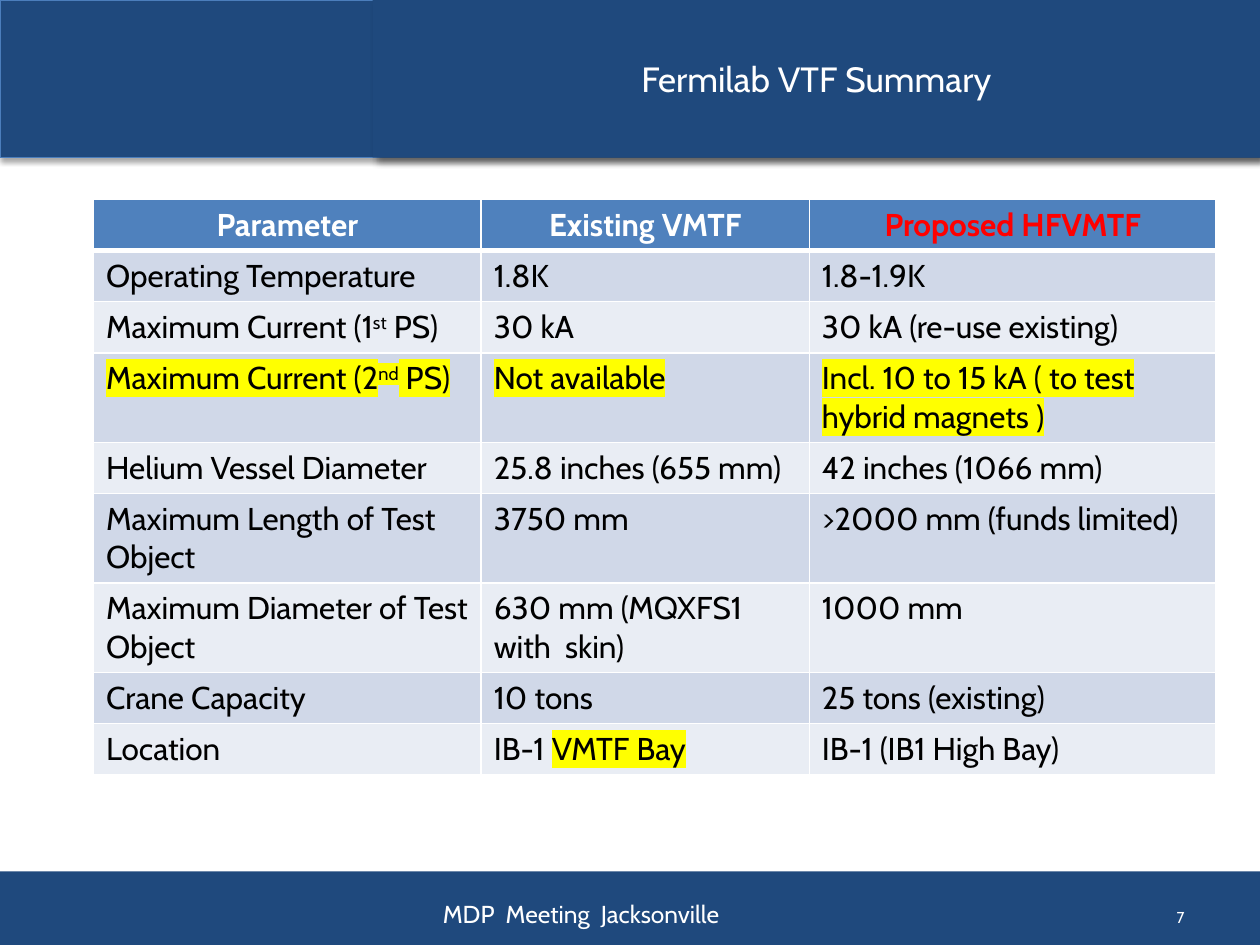
from collections import namedtuple
from dataclasses import dataclass

from lxml import etree
from pptx import Presentation
from pptx.dml.color import RGBColor
from pptx.enum.shapes import MSO_SHAPE
from pptx.enum.text import MSO_ANCHOR, MSO_AUTO_SIZE, PP_ALIGN
from pptx.oxml import parse_xml
from pptx.oxml.ns import nsdecls, qn
from pptx.util import Pt

RECTANGLE = MSO_SHAPE.RECTANGLE
TOP, MIDDLE = MSO_ANCHOR.TOP, MSO_ANCHOR.MIDDLE
LEFT, CENTER, RIGHT = PP_ALIGN.LEFT, PP_ALIGN.CENTER, PP_ALIGN.RIGHT
NO_FIT = MSO_AUTO_SIZE.NONE
TITLE_ONLY = 5

Shadow = namedtuple("Shadow", "opacity blur distance angle")
Piece = namedtuple("Piece", "text marked raised", defaults=(False, False))


@dataclass(frozen=True)
class Theme:
    font: str = "Cabin"
    navy: str = "1F497D"
    outline: str = "4B7EBC"
    header: str = "4F81BD"
    bands: tuple = ("D0D8E8", "E9EDF4")
    white: str = "FFFFFF"
    black: str = "000000"
    red: str = "FF0000"
    marker: str = "FFFF00"
    title_size: int = 20
    table_size: int = 18
    footer_size: int = 14
    number_size: int = 9


# Table content: a cell is plain text or a list of pieces
HEADINGS = ["Parameter", "Existing VMTF", "Proposed HFVMTF"]
ROWS = [
    ["Operating Temperature", "1.8K", "1.8-1.9K"],
    [[Piece("Maximum Current (1"), Piece("st", raised=True), Piece(" PS)")],
     "30 kA", "30 kA (re-use existing)"],
    [[Piece("Maximum Current (2", True), Piece("nd", True, True), Piece(" PS)", True)],
     [Piece("Not available", True)],
     [Piece("Incl. 10 to 15 kA ( to test hybrid magnets )", True)]],
    ["Helium Vessel Diameter", "25.8 inches (655 mm)", "42 inches (1066 mm)"],
    ["Maximum Length of Test Object", "3750 mm", ">2000 mm (funds limited)"],
    ["Maximum Diameter of Test Object", "630 mm (MQXFS1 with  skin)", "1000 mm"],
    ["Crane Capacity", "10 tons", "25 tons (existing)"],
    ["Location", [Piece("IB-1 "), Piece("VMTF Bay", True)], "IB-1 (IB1 High Bay)"],
]


class PageBuilder:
    def __init__(self, page, theme):
        self.page = page
        self.theme = theme

    def style_span(self, span, size, color, bold=False):
        span.font.name = self.theme.font
        span.font.size = Pt(size)
        span.font.bold = bold
        span.font.color.rgb = RGBColor.from_string(color)

    def set_text(self, frame, text, size, align, anchor):
        frame.text = text
        frame.word_wrap = True
        frame.auto_size = NO_FIT
        frame.vertical_anchor = anchor
        para = frame.paragraphs[0]
        para.alignment = align
        self.style_span(para.runs[0], size, self.theme.white)

    def paint(self, shape, shadow=None, outline=None):
        shape.fill.solid()
        shape.fill.fore_color.rgb = RGBColor.from_string(self.theme.navy)
        if outline:
            shape.line.color.rgb = RGBColor.from_string(outline)
            shape.line.width = Pt(0.75)
        else:
            shape.line.fill.background()
        shape.shadow.inherit = False
        if shadow:
            effects = shape._element.spPr.find(qn("a:effectLst"))
            effects.append(parse_xml(
                f'<a:outerShdw {nsdecls("a")} blurRad="{Pt(shadow.blur)}" '
                f'dist="{Pt(shadow.distance)}" dir="{shadow.angle * 60000}" '
                f'algn="tl" rotWithShape="0"><a:srgbClr val="{self.theme.black}">'
                f'<a:alpha val="{shadow.opacity * 1000}"/></a:srgbClr></a:outerShdw>'))

    def band(self, left, top, width, height, shadow=None, outline=None):
        shape = self.page.shapes.add_shape(
            RECTANGLE, Pt(left), Pt(top), Pt(width), Pt(height))
        self.paint(shape, shadow, outline)

    def title(self, text, left, top, width, height, shadow):
        title = self.page.shapes.title
        title.left, title.top = Pt(left), Pt(top)
        title.width, title.height = Pt(width), Pt(height)
        self.paint(title, shadow)
        self.set_text(title.text_frame, text, self.theme.title_size, CENTER, MIDDLE)
        # Bring the title in front of the header band
        self.page.shapes._spTree.append(title._element)

    def label(self, text, left, top, width, height, size, align, anchor):
        box = self.page.shapes.add_textbox(Pt(left), Pt(top), Pt(width), Pt(height))
        self.set_text(box.text_frame, text, size, align, anchor)

    def fill_cell(self, cell, content, fill, color, align=LEFT, bold=False):
        pieces = [Piece(content)] if isinstance(content, str) else content
        cell.fill.solid()
        cell.fill.fore_color.rgb = RGBColor.from_string(fill)
        para = cell.text_frame.paragraphs[0]
        para.alignment = align
        for piece in pieces:
            span = para.add_run()
            span.text = piece.text
            self.style_span(span, self.theme.table_size, color, bold)
            props = span._r.get_or_add_rPr()
            if piece.raised:
                props.set("baseline", "30000")
            if piece.marked:
                marker = etree.Element(qn("a:highlight"))
                etree.SubElement(marker, qn("a:srgbClr"), val=self.theme.marker)
                props.find(qn("a:solidFill")).addnext(marker)

    def border_cell(self, cell, top=1, bottom=1):
        props = cell._tc.get_or_add_tcPr()
        sides = {"lnL": 1, "lnR": 1, "lnT": top, "lnB": bottom}
        for index, (side, width) in enumerate(sides.items()):
            props.insert(index, parse_xml(
                f'<a:{side} {nsdecls("a")} w="{Pt(width)}"><a:solidFill>'
                f'<a:srgbClr val="{self.theme.white}"/></a:solidFill></a:{side}>'))

    def table(self, headings, rows, left, top, widths, row_height):
        theme = self.theme
        count = len(rows) + 1
        table = self.page.shapes.add_table(
            count, len(widths), Pt(left), Pt(top),
            Pt(sum(widths)), Pt(row_height * count)).table
        for column, width in zip(table.columns, widths):
            column.width = Pt(width)
        # Heading row, with the proposed facility in red
        for column, heading in enumerate(headings):
            color = theme.red if column == len(headings) - 1 else theme.white
            cell = table.cell(0, column)
            self.fill_cell(cell, heading, theme.header, color, CENTER, True)
            self.border_cell(cell, bottom=3)
        # Banded body rows
        for number, row in enumerate(rows):
            for column, content in enumerate(row):
                cell = table.cell(number + 1, column)
                self.fill_cell(cell, content, theme.bands[number % 2], theme.black)
                self.border_cell(cell, top=3 if number == 0 else 1)


def main():
    deck = Presentation()
    deck.slide_width, deck.slide_height = Pt(720), Pt(540)
    theme = Theme()
    page = deck.slides.add_slide(deck.slide_layouts[TITLE_ONLY])
    builder = PageBuilder(page, theme)

    # Footer and header bands
    builder.band(0, 498, 721.5, 43)
    builder.band(0, 0, 720, 90, Shadow(35, 3.1, 1.8, 90), theme.outline)
    builder.label("7", 643, 510, 41, 28.8, theme.number_size, RIGHT, MIDDLE)

    # Title and comparison table
    builder.title("Fermilab VTF Summary", 213, 0, 507, 90, Shadow(43, 4, 3, 45))
    builder.table(HEADINGS, ROWS, 53.5, 114, (221.5, 187.5, 232.5), 29.2)

    # Footer text
    builder.label("MDP  Meeting  Jacksonville", 246, 510, 320, 28.8,
                  theme.footer_size, LEFT, TOP)
    deck.save("out.pptx")


if __name__ == "__main__":
    main()
